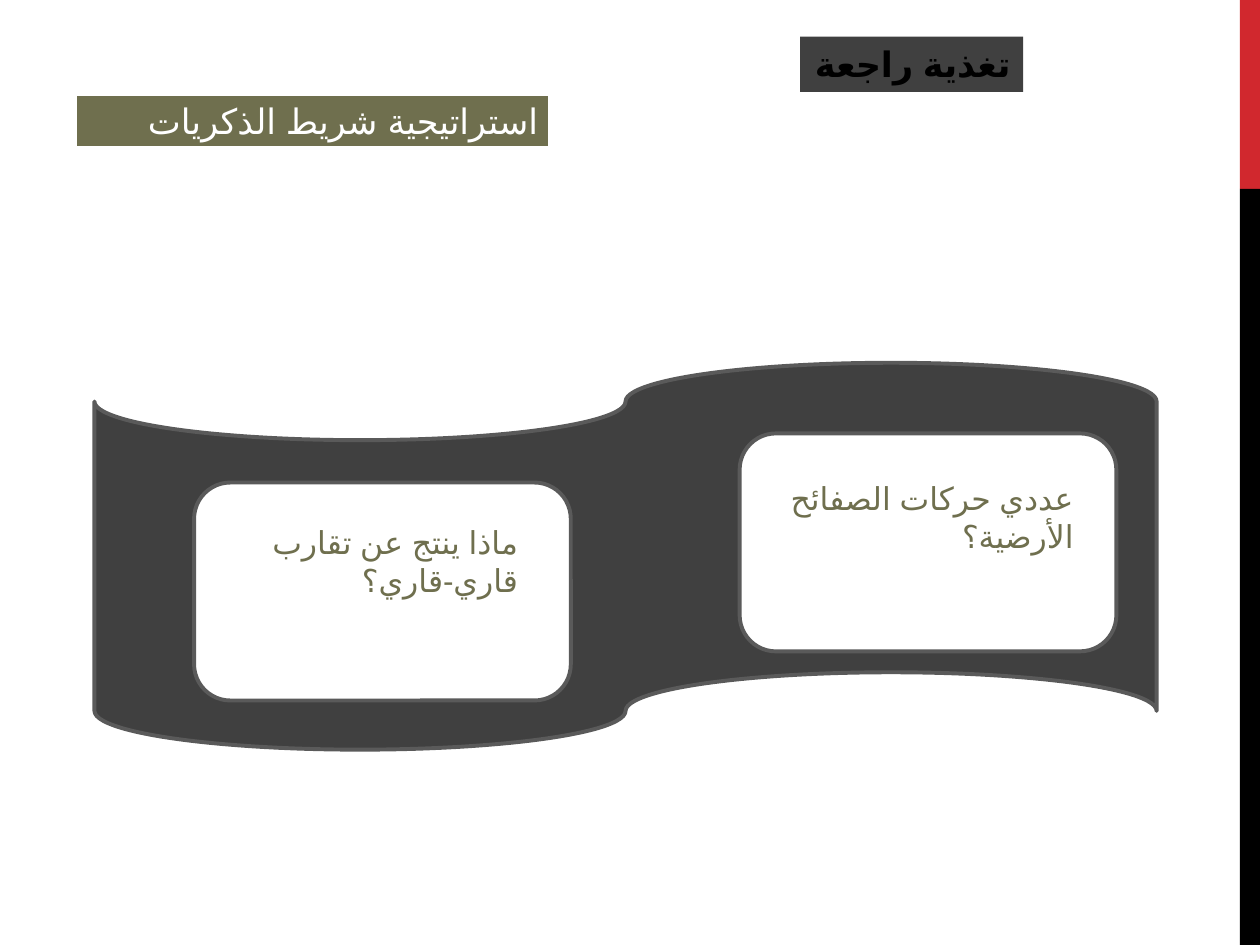
"""Build the feedback slide: two review questions on a memory tape."""
from pptx import Presentation
from pptx.dml.color import RGBColor
from pptx.enum.lang import MSO_LANGUAGE_ID as Language
from pptx.enum.shapes import MSO_SHAPE as Shape
from pptx.enum.text import MSO_ANCHOR as Anchor, MSO_AUTO_SIZE as AutoSize, PP_ALIGN as Align
from pptx.util import Inches, Pt
from lxml.etree import SubElement
from pptx.oxml.ns import qn

RED = RGBColor(0xD1, 0x28, 0x2E)
BLACK = RGBColor(0, 0, 0)
WHITE = RGBColor(0xFF, 0xFF, 0xFF)
OLIVE = RGBColor(0x6F, 0x6F, 0x4E)
CHARCOAL = RGBColor(0x40, 0x40, 0x40)
GRAY = RGBColor(0x5A, 0x5A, 0x5A)
FONT = "Arial"

HEADING = "تغذية راجعة"
STRATEGY = "استراتيجية شريط الذكريات"
QUESTIONS = [
    {"lines": ["عددي حركات الصفائح الأرضية؟"], "frame": (5.87, 3.44), "text": (6.1, 3.75)},
    {"lines": ["ماذا ينتج عن تقارب", "قاري-قاري؟"], "frame": (1.54, 3.83), "text": (1.69, 4.1)},
]
FRAME_SIZE = (2.99, 1.73)
QUESTION_SIZE = (2.52, 0.71)
SIDE_BARS = [(0, 1.5, RED), (1.5, 6, BLACK)]
BAR_LEFT, BAR_WIDTH = 9.84, 0.16


def add_panel(slide, kind, box, fill, line=None, width=2.25):
    panel = slide.shapes.add_shape(kind, *map(Inches, box))
    panel.shadow.inherit = False
    panel.fill.solid()
    panel.fill.fore_color.rgb = fill
    if line is None:
        panel.line.fill.background()
    else:
        panel.line.color.rgb = line
        panel.line.width = Pt(width)
    return panel


def write_arabic(holder, lines, fit=AutoSize.SHAPE_TO_FIT_TEXT, wrap=True, **font_format):
    frame = holder.text_frame
    frame.text = "\n".join(lines)
    frame.word_wrap = wrap
    frame.auto_size = fit
    frame.vertical_anchor = Anchor.TOP
    color = font_format.pop("color")
    font_format.update(name=FONT, language_id=Language.ARABIC)
    for paragraph in frame.paragraphs:
        paragraph.alignment = Align.RIGHT
        paragraph._p.get_or_add_pPr().set("rtl", "1")
        for run in paragraph.runs:
            for name, value in font_format.items():
                setattr(run.font, name, value)
            run.font.color.rgb = color
            SubElement(run._r.get_or_add_rPr(), qn("a:cs"), typeface=FONT)


def main():
    deck = Presentation()
    deck.slide_width, deck.slide_height = Inches(10), Inches(7.5)
    slide = deck.slides.add_slide(deck.slide_layouts[5])

    for top, height, color in SIDE_BARS:
        add_panel(slide, Shape.RECTANGLE, (BAR_LEFT, top, BAR_WIDTH, height), color)

    strategy = add_panel(slide, Shape.RECTANGLE, (0.59, 0.74, 3.78, 0.44), OLIVE, WHITE, 3.25)
    write_arabic(strategy, [STRATEGY], size=Pt(20), color=WHITE)

    add_panel(slide, Shape.FLOWCHART_PUNCHED_TAPE, (0.75, 2.88, 8.43, 3.07), CHARCOAL, GRAY)
    for question in QUESTIONS:
        add_panel(slide, Shape.ROUNDED_RECTANGLE, question["frame"] + FRAME_SIZE, WHITE, GRAY)
    for question in QUESTIONS:
        prompt = slide.shapes.add_textbox(*map(Inches, question["text"] + QUESTION_SIZE))
        write_arabic(prompt, question["lines"], size=Pt(18), color=OLIVE)

    heading = slide.shapes.title
    heading.left, heading.top, heading.width, heading.height = map(Inches, (6.35, 0.29, 1.77, 0.44))
    heading.fill.solid()
    heading.fill.fore_color.rgb = CHARCOAL
    write_arabic(heading, [HEADING], AutoSize.NONE, size=Pt(20), bold=True, color=BLACK)

    deck.save("out.pptx")


if __name__ == "__main__":
    main()
